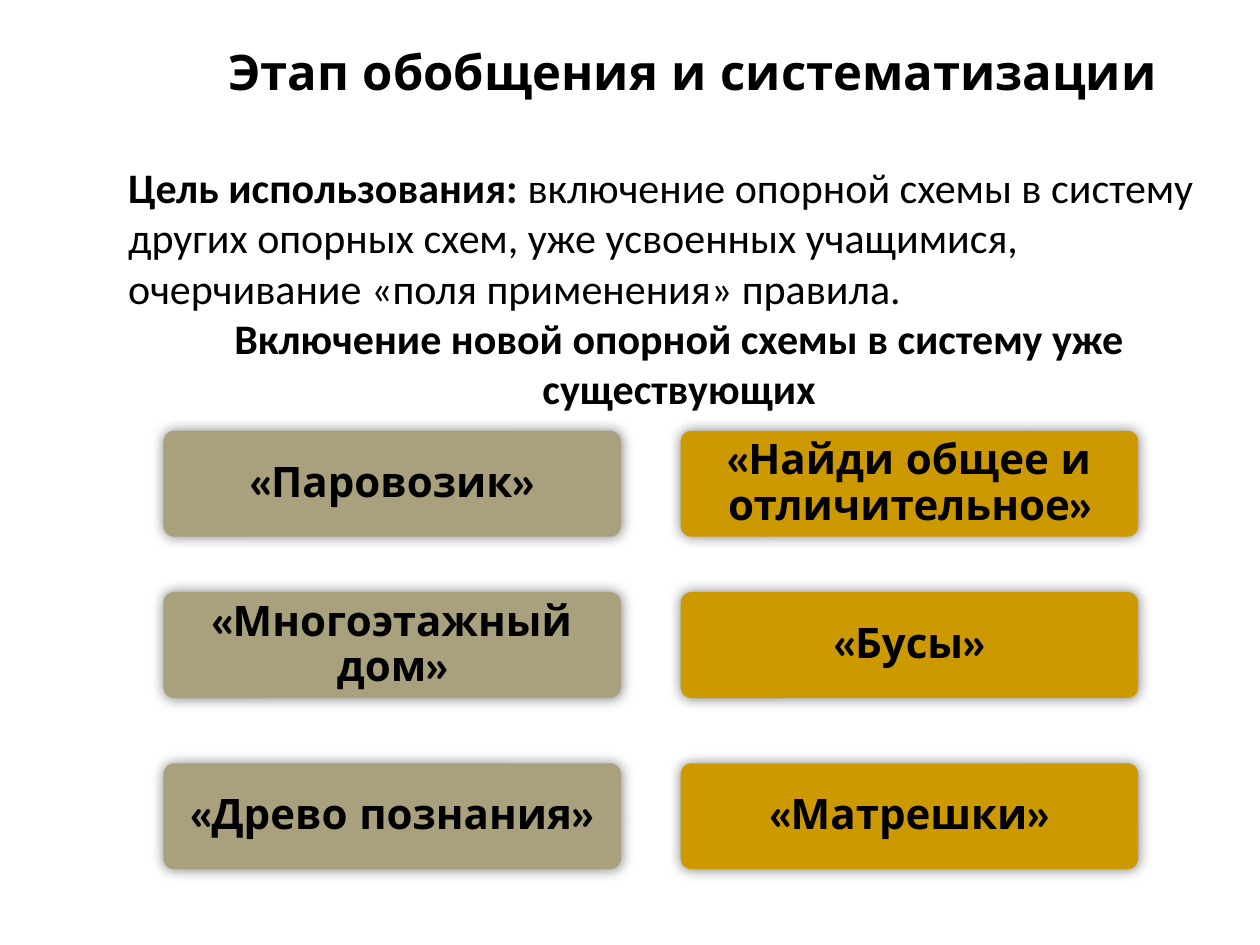
from dataclasses import dataclass

from lxml import etree
from pptx import Presentation
from pptx.dml.color import RGBColor
from pptx.enum.shapes import MSO_SHAPE
from pptx.enum.text import MSO_ANCHOR, MSO_AUTO_SIZE, PP_ALIGN
from pptx.oxml.ns import qn
from pptx.util import Pt

ROUNDED = MSO_SHAPE.ROUNDED_RECTANGLE
CENTER, LEFT = PP_ALIGN.CENTER, PP_ALIGN.LEFT
TOP, MIDDLE = MSO_ANCHOR.TOP, MSO_ANCHOR.MIDDLE
NO_AUTOFIT = MSO_AUTO_SIZE.NONE

TITLE = "Этап обобщения и систематизации"
GOAL = [
    ("Цель использования: ", True),
    ("включение опорной схемы в систему других опорных схем, уже усвоенных "
     "учащимися, очерчивание «поля применения» правила.", False),
]
METHODS_HEADING = [("Включение новой опорной схемы в систему уже существующих", True)]
METHOD_COLUMNS = [
    ["«Паровозик»", "«Многоэтажный дом»", "«Древо познания»"],
    ["«Найди общее и отличительное»", "«Бусы»", "«Матрешки»"],
]


@dataclass(frozen=True)
class Theme:
    text: str = "000000"
    background: str = "FFFFFF"
    columns: tuple = ("A9A17E", "CC9900")
    display_font: str = "Quicksand"
    body_font: str = "Calibri"
    title_size: int = 28
    text_size: int = 24


THEME = Theme()

# Lengths in points
SLIDE_SIZE = (720, 540)
TITLE_BOX = (82.8, 20.2, 625.7, 41)
BODY_BOX = (66.2, 88.6, 643.7, 181.4)
CARD_SIZE = (261.4, 60.5)
CARD_LEFT, COLUMN_STEP = 93.4, 295.6
ROW_TOPS = (246.2, 338.4, 436.2)
CARD_INSETS = (5, 3.6)
SHADOW_BLUR = 7.5


def style_run(run, font, size, bold=True):
    run.font.name = font
    run.font.size = Pt(size)
    run.font.bold = bold
    run.font.color.rgb = RGBColor.from_string(THEME.text)


def add_soft_shadow(shape):
    """Give the shape an even, half-transparent glow of shadow."""
    shape.shadow.inherit = False
    effects = shape._element.spPr.find(qn("a:effectLst"))
    shadow = etree.SubElement(effects, qn("a:outerShdw"), blurRad=str(Pt(SHADOW_BLUR)),
                              dist="0", dir="0", algn="ctr", rotWithShape="0")
    color = etree.SubElement(shadow, qn("a:srgbClr"), val="000000")
    etree.SubElement(color, qn("a:alpha"), val="50000")


def add_title(slide):
    title = slide.shapes.title
    title.left, title.top, title.width, title.height = map(Pt, TITLE_BOX)
    frame = title.text_frame
    frame.text = TITLE
    frame.auto_size = NO_AUTOFIT
    frame.vertical_anchor = TOP
    paragraph = frame.paragraphs[0]
    paragraph.alignment = CENTER
    style_run(paragraph.runs[0], THEME.display_font, THEME.title_size)


def add_body(slide):
    frame = slide.shapes.add_textbox(*map(Pt, BODY_BOX)).text_frame
    frame.word_wrap = True
    goal, heading = frame.paragraphs[0], frame.add_paragraph()
    for paragraph, parts, alignment in ((goal, GOAL, LEFT),
                                        (heading, METHODS_HEADING, CENTER)):
        paragraph.alignment = alignment
        for text, bold in parts:
            run = paragraph.add_run()
            run.text = text
            style_run(run, THEME.body_font, THEME.text_size, bold)


def add_method_card(slide, method, left, top, fill):
    card = slide.shapes.add_shape(ROUNDED, Pt(left), Pt(top), *map(Pt, CARD_SIZE))
    card.adjustments[0] = 0.1
    card.fill.solid()
    card.fill.fore_color.rgb = RGBColor.from_string(fill)
    card.line.fill.background()
    add_soft_shadow(card)
    frame = card.text_frame
    frame.text = method
    frame.word_wrap = True
    frame.vertical_anchor = MIDDLE
    side, edge = map(Pt, CARD_INSETS)
    frame.margin_left = frame.margin_right = side
    frame.margin_top = frame.margin_bottom = edge
    paragraph = frame.paragraphs[0]
    paragraph.alignment = CENTER
    paragraph.line_spacing = 0.9
    style_run(paragraph.runs[0], THEME.display_font, THEME.text_size)


def main():
    deck = Presentation()
    deck.slide_width, deck.slide_height = map(Pt, SLIDE_SIZE)
    slide = deck.slides.add_slide(deck.slide_layouts.get_by_name("Title Only"))
    slide.background.fill.solid()
    slide.background.fill.fore_color.rgb = RGBColor.from_string(THEME.background)
    add_title(slide)
    add_body(slide)
    for column, (methods, fill) in enumerate(zip(METHOD_COLUMNS, THEME.columns)):
        for method, top in zip(methods, ROW_TOPS):
            add_method_card(slide, method, CARD_LEFT + column * COLUMN_STEP, top, fill)
    deck.save("out.pptx")


if __name__ == "__main__":
    main()
